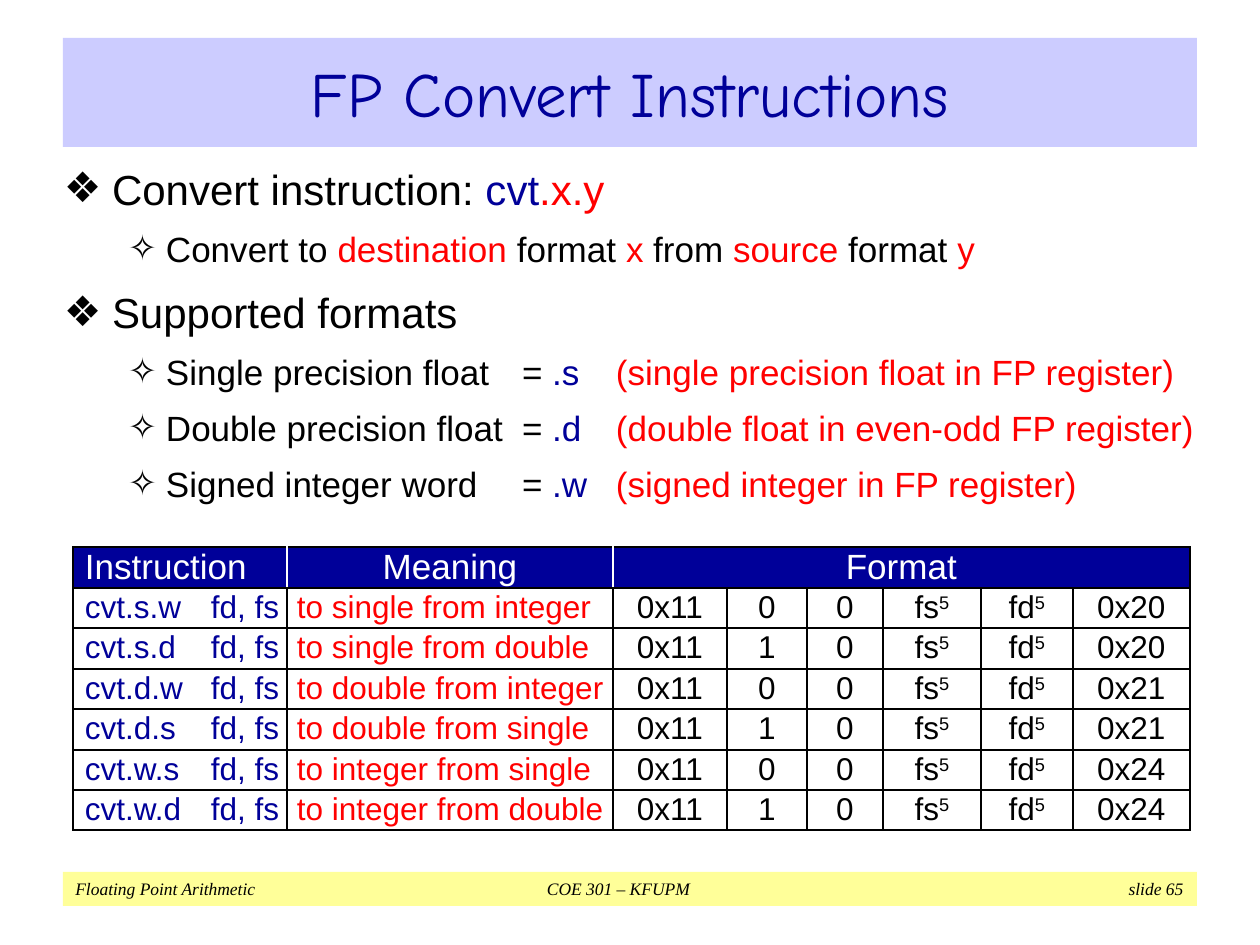
import pptx
import pptx.util
import pptx.dml.color
import pptx.enum.shapes
import pptx.enum.text
import lxml.etree

PX = 914400 // 126
A = "http://schemas.openxmlformats.org/drawingml/2006/main"
ALIGN = pptx.enum.text.PP_ALIGN
NAVY, RED, BLACK, WHITE = "000099", "FF0000", "000000", "FFFFFF"


def write(p, runs, size, font="Arial", before=0, bullet=None, tabs=()):
    """Fill a paragraph with (text, colour) runs; '^' starts a superscript."""
    pPr = p._p.get_or_add_pPr()
    xml = ""
    if before:
        xml += f'<a:spcBef><a:spcPct val="{before * 1000}"/></a:spcBef>'
    if bullet:
        xml += f'<a:buFont typeface="Arial"/><a:buChar char="{bullet}"/>'
    if tabs:
        stops = "".join(f'<a:tab pos="{x * PX}" algn="{a}"/>' for x, a in tabs)
        xml += f"<a:tabLst>{stops}</a:tabLst>"
    pPr.extend(lxml.etree.fromstring(f'<a:pPr xmlns:a="{A}">{xml}</a:pPr>'))
    p.font.size = pptx.util.Pt(size)
    p.font.name = font
    for text, color in runs:
        for i, part in enumerate(text.split("^")):
            r = p.add_run()
            r.text = part
            r.font.color.rgb = rgb(color)
            if i:
                r._r.get_or_add_rPr().set("baseline", "30000")


def rgb(color):
    return pptx.dml.color.RGBColor.from_string(color)


prs = pptx.Presentation()
prs.slide_width, prs.slide_height = 1260 * PX, 945 * PX
s = prs.slides.add_slide(prs.slide_layouts[6])

# Title band and footer band
bands = []
for top, height, fill in ((38, 109, "CCCCFF"), (872, 34, "FFFF99")):
    sp = s.shapes.add_shape(pptx.enum.shapes.MSO_SHAPE.RECTANGLE,
                            63 * PX, top * PX, 1134 * PX, height * PX)
    sp.shadow.inherit = False
    sp.fill.solid()
    sp.fill.fore_color.rgb = rgb(fill)
    sp.line.fill.background()
    sp.text_frame.vertical_anchor = pptx.enum.text.MSO_ANCHOR.MIDDLE
    bands.append(sp.text_frame.paragraphs[0])
title, footer = bands
title.alignment = ALIGN.CENTER
write(title, [("FP Convert Instructions", NAVY)], 36, "Comic Neue")
footer.alignment = ALIGN.LEFT
write(footer, [("Floating Point Arithmetic\tCOE 301 – KFUPM\t slide 65", BLACK)],
      10, "Times New Roman", tabs=((543, "ctr"), (1108, "r")))
footer.font.italic = True

# Instruction table
widths = (214, 326, 114, 80, 76, 98, 92, 117)
heights = (41, 40, 41, 40, 41, 40, 40)
rows = [("Instruction", "Meaning", "Format", "", "", "", "", "")]
names = {"s": "single", "d": "double", "w": "integer"}
for to, code in (("s", "0x20"), ("d", "0x21"), ("w", "0x24")):
    sources = [f for f in "wsd" if f != to]
    for bit, source in enumerate(sources):
        rows.append((f"cvt.{to}.{source}\tfd, fs",
                     f"to {names[to]} from {names[source]}",
                     "0x11", str(bit), "0", "fs^5", "fd^5", code))

frame = s.shapes.add_table(len(rows), len(widths), 73 * PX, 547 * PX,
                           sum(widths) * PX, sum(heights) * PX)
table = frame.table
table.first_row = table.horz_banding = False
for column, width in zip(table.columns, widths):
    column.width = width * PX
for i, row in enumerate(rows):
    header = i == 0
    table.rows[i].height = heights[i] * PX
    for j, text in enumerate(row):
        cell = table.cell(i, j)
        cell.margin_top = cell.margin_bottom = (1 if header else 2) * PX
        cell.margin_left = (10 if j == 1 and not header else 12) * PX
        cell.margin_right = (0 if j < 2 and not header else 12) * PX
        cell.fill.solid()
        cell.fill.fore_color.rgb = rgb(NAVY if header else WHITE)
        tcPr = cell._tc.get_or_add_tcPr()
        for k, side in enumerate("LRTB"):
            inner = header and (side == "L" and j in (1, 2) or side == "R" and j < 2)
            tcPr.insert(k, lxml.etree.fromstring(
                f'<a:ln{side} xmlns:a="{A}" w="12700"><a:solidFill><a:srgbClr '
                f'val="{WHITE if inner else BLACK}"/></a:solidFill></a:ln{side}>'))
        if text:
            p = cell.text_frame.paragraphs[0]
            centred = j > 1 or header and j == 1
            p.alignment = ALIGN.CENTER if centred else ALIGN.LEFT
            color = WHITE if header else (NAVY, RED)[j] if j < 2 else BLACK
            write(p, [(text, color)], 20 if header else 18,
                  tabs=((126, "l"),) if "\t" in text else ())
table.cell(0, 2).merge(table.cell(0, 7))

# Bulleted text
body = [
    (0, [("Convert instruction: ", BLACK), ("cvt", NAVY), (".x.y", RED)]),
    (1, [("Convert to ", BLACK), ("destination", RED), (" format ", BLACK),
         ("x", RED), (" from ", BLACK), ("source", RED), (" format ", BLACK),
         ("y", RED)]),
    (0, [("Supported formats", BLACK)]),
]
for name, suffix, note in (
        ("Single precision float", ".s", "(single precision float in FP register)"),
        ("Double precision float", ".d", "(double float in even-odd FP register)"),
        ("Signed integer word", ".w", "(signed integer in FP register)")):
    body.append((1, [(f"{name}\t= ", BLACK), (f"{suffix}\t", NAVY), (note, RED)]))

tf = s.shapes.add_textbox(64 * PX, 157 * PX, 1132 * PX, 375 * PX).text_frame
tf.word_wrap = True
tf.margin_left = tf.margin_right = 0
for i, (level, runs) in enumerate(body):
    p = tf.add_paragraph() if i else tf.paragraphs[0]
    p.level = level
    left, hang, size, bullet = ((48, 48, 24, "❖"), (102, 38, 20, "✧"))[level]
    pPr = p._p.get_or_add_pPr()
    pPr.set("marL", str(left * PX))
    pPr.set("indent", str(-hang * PX))
    write(p, runs, size, before=40, bullet=bullet,
          tabs=((458, "l"), (552, "l")) if level else ())

prs.save("out.pptx")
